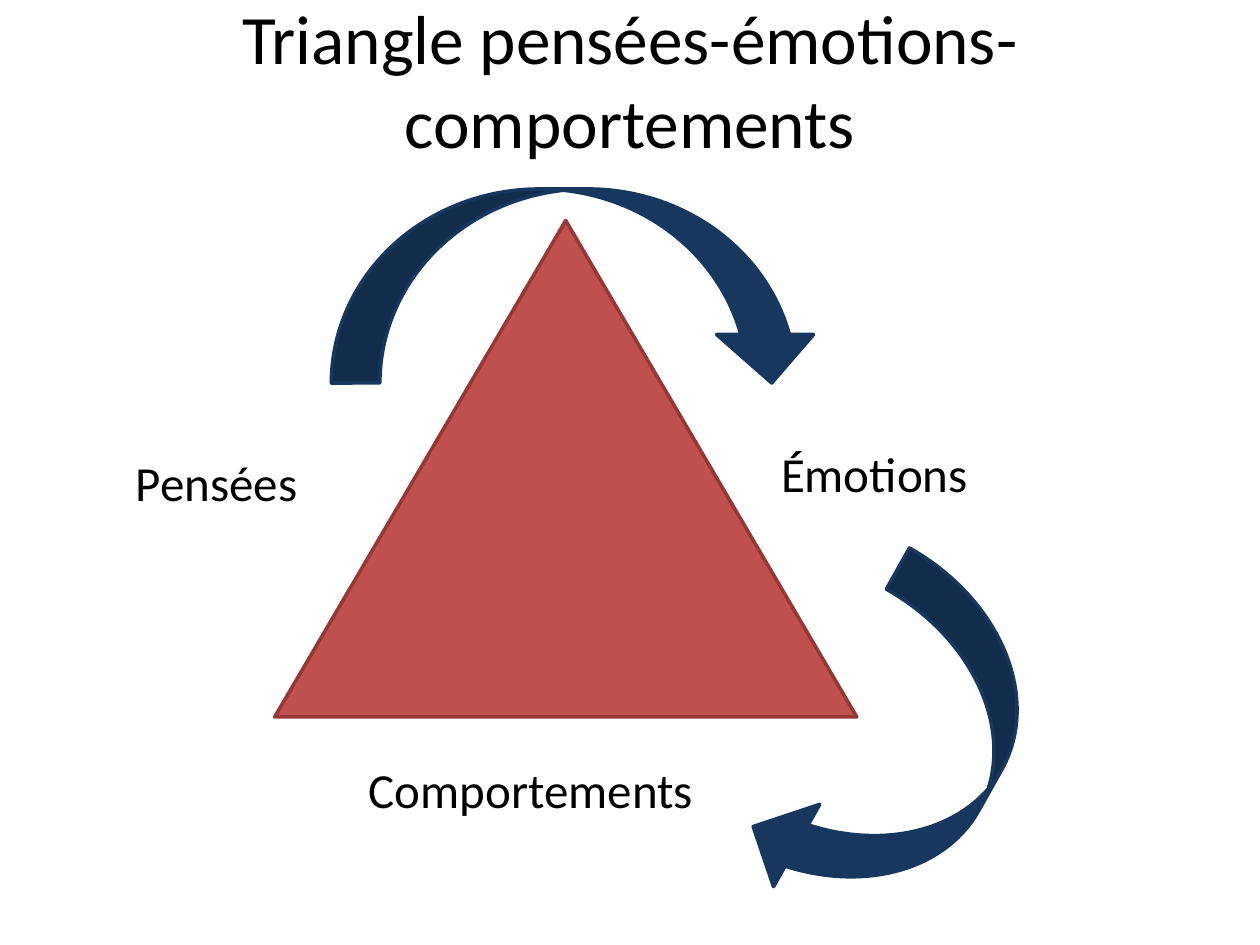
"""Build a slide showing the thoughts, emotions and behaviours triangle."""
import pptx
import pptx.dml.color
import pptx.enum.shapes
import pptx.enum.text
import pptx.util

PX = 9144
SHAPES = pptx.enum.shapes.MSO_SHAPE
FONT = "Calibri"
BLACK, RED, DARK_RED, NAVY = "000000", "C0504D", "953735", "17375E"


def px(length):
    """Turn a length in px, 100 to the inch, into EMU."""
    return pptx.util.Emu(length * PX)


def color(code):
    """Turn a hex string into a colour."""
    return pptx.dml.color.RGBColor.from_string(code)


def format_font(para, size):
    """Set the font of a paragraph."""
    para.font.name = FONT
    para.font.size = pptx.util.Pt(size)
    para.font.color.rgb = color(BLACK)


def add_title(page, box, text):
    """Fill the title placeholder and move it to the box."""
    title = page.shapes.title
    title.left, title.top, title.width, title.height = map(px, box)
    frame = title.text_frame
    frame.text = text
    frame.vertical_anchor = pptx.enum.text.MSO_ANCHOR.MIDDLE
    para = frame.paragraphs[0]
    para.alignment = pptx.enum.text.PP_ALIGN.CENTER
    format_font(para, 39.6)


def add_figure(page, kind, box, fill, line, rotation=0):
    """Add a filled and outlined preset shape."""
    figure = page.shapes.add_shape(kind, *map(px, box))
    figure.shadow.inherit = False
    figure.rotation = rotation
    figure.fill.solid()
    figure.fill.fore_color.rgb = color(fill)
    figure.line.color.rgb = color(line)
    figure.line.width = pptx.util.Pt(2)


def add_label(page, box, text):
    """Add the name of one side of the triangle."""
    label = page.shapes.add_textbox(*map(px, box))
    frame = label.text_frame
    frame.word_wrap = True
    frame.auto_size = pptx.enum.text.MSO_AUTO_SIZE.SHAPE_TO_FIT_TEXT
    frame.text = text
    format_font(frame.paragraphs[0], 28)


def add_cycle(page, left, top):
    """Add the triangle, its labels and arrows from a top left corner."""
    figures = [
        (SHAPES.ISOSCELES_TRIANGLE, 120, 25, 462, 394, RED, DARK_RED, 0),
        (SHAPES.CURVED_DOWN_ARROW, 165, 0, 388, 154, NAVY, NAVY, 0),
        (SHAPES.CURVED_LEFT_ARROW, 543, 303, 150, 291, NAVY, NAVY, 29.3),
    ]
    labels = [
        ("Pensées", 0, 204, 170),
        ("Émotions", 512, 197, 318),
        ("Comportements", 185, 448, 296),
    ]
    for kind, x, y, width, height, fill, line, rotation in figures:
        box = (left + x, top + y, width, height)
        add_figure(page, kind, box, fill, line, rotation)
    for text, x, y, width in labels:
        add_label(page, (left + x, top + y, width, 57), text)


def main():
    """Build and save the deck."""
    deck = pptx.Presentation()
    deck.slide_width, deck.slide_height = px(1000), px(750)
    page = deck.slides.add_slide(deck.slide_layouts.get_by_name("Title Only"))
    add_title(page, (50, 0, 900, 125), "Triangle pensées-émotions-comportements")
    add_cycle(page, 98, 150)
    deck.save("out.pptx")


if __name__ == "__main__":
    main()
